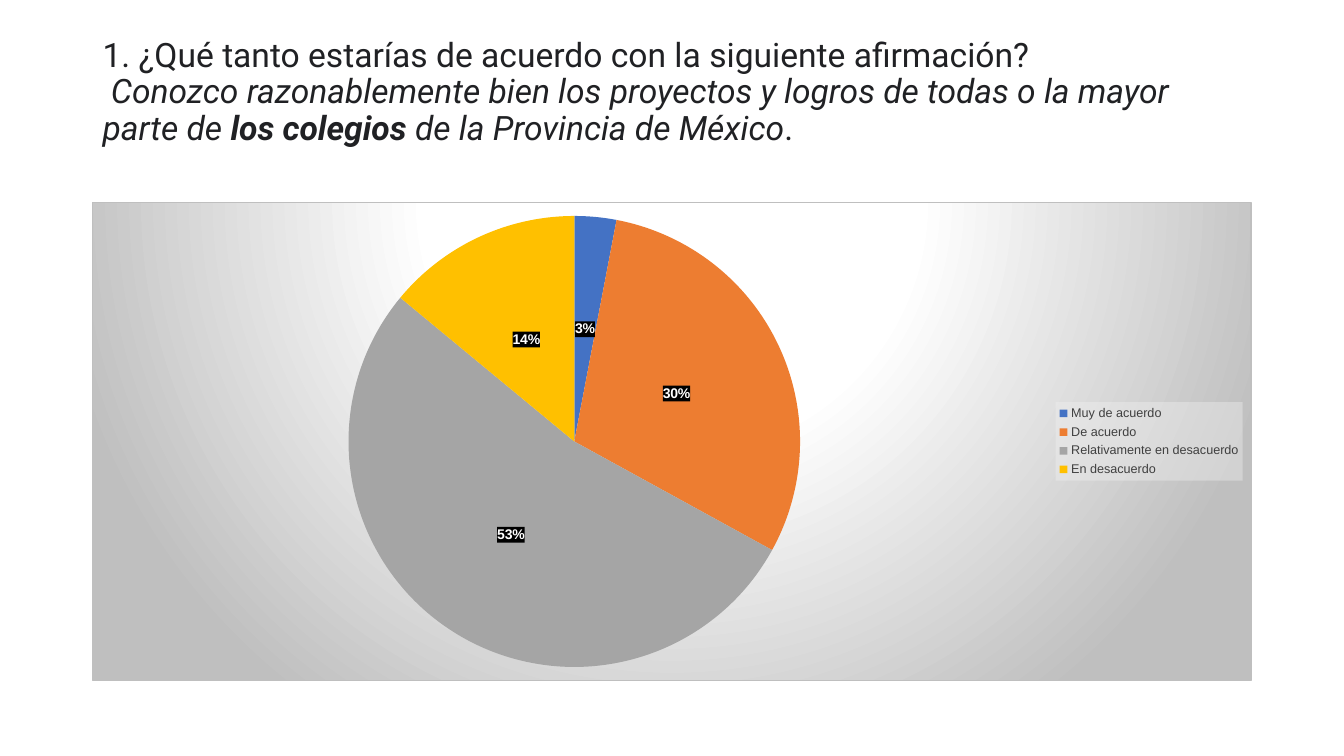
from copy import deepcopy

from pptx import Presentation
from pptx.chart.data import CategoryChartData
from pptx.dml.color import RGBColor
from pptx.enum.chart import XL_CHART_TYPE as CHART, XL_LABEL_POSITION as LABEL_POS
from pptx.enum.chart import XL_LEGEND_POSITION as LEGEND_POS
from pptx.enum.text import MSO_ANCHOR, MSO_AUTO_SIZE
from pptx.oxml import parse_xml
from pptx.oxml.ns import nsdecls, qn
from pptx.util import Cm, Pt

BLACK = RGBColor(0x00, 0x00, 0x00)
WHITE = RGBColor(0xFF, 0xFF, 0xFF)
INK = RGBColor(0x20, 0x21, 0x24)
LEGEND_INK = RGBColor(0x40, 0x40, 0x40)
LEGEND_BACK = RGBColor(0xF2, 0xF2, 0xF2)
SILVER = RGBColor(0xBF, 0xBF, 0xBF)
BLUE = RGBColor(0x44, 0x72, 0xC4)
ORANGE = RGBColor(0xED, 0x7D, 0x31)
GRAY = RGBColor(0xA5, 0xA5, 0xA5)
GOLD = RGBColor(0xFF, 0xC0, 0x00)

# Each row is a run: text, format, line break after it
QUESTION = [
    ("1. ¿Qué tanto estarías de acuerdo con la siguiente afirmación?", {}, True),
    (" ", {}, False),
    ("Conozco razonablemente bien los proyectos y logros de todas o la mayor parte de ",
     {"italic": True}, False),
    ("los colegios ", {"italic": True, "bold": True}, False),
    ("de la Provincia de México", {"italic": True}, False),
    (". ", {}, True),
]
ANSWERS = [
    ("Muy de acuerdo", 3, BLUE),
    ("De acuerdo", 30, ORANGE),
    ("Relativamente en desacuerdo", 53, GRAY),
    ("En desacuerdo", 14, GOLD),
]
BACKDROP = [(0, WHITE), (39, WHITE), (100, SILVER)]
LEFT, WIDTH = Cm(2.33), Cm(29.21)


def set_font(font, color, **values):
    font.color.rgb = color
    for name, value in values.items():
        setattr(font, name, value)


def shape_props(content):
    return parse_xml(f"<c:spPr {nsdecls('c', 'a')}>{content}</c:spPr>")


def solid_fill(color, opacity):
    return (f'<a:solidFill><a:srgbClr val="{color}"><a:alpha val="{opacity * 1000}"/>'
            "</a:srgbClr></a:solidFill>")


def add_question(slide):
    title = slide.shapes.title
    title.left, title.top, title.width, title.height = LEFT, Cm(1.01), WIDTH, Cm(3.68)
    tf = title.text_frame
    tf.auto_size = MSO_AUTO_SIZE.NONE
    tf.vertical_anchor = MSO_ANCHOR.MIDDLE
    p = tf.paragraphs[0]
    p.line_spacing = 0.9
    for text, style, breaks in QUESTION:
        r = p.add_run()
        r.text = text
        set_font(r.font, INK, size=Pt(24), name="Roboto", **style)
        if breaks:
            p.add_line_break()
    # Line breaks and the closing empty line keep the size of the text
    for br in p._p.findall(qn("a:br")):
        br.append(deepcopy(br.getprevious().find(qn("a:rPr"))))
    p._p.append(parse_xml(f'<a:endParaRPr {nsdecls("a")} sz="2400">'
                          '<a:latin typeface="Roboto"/></a:endParaRPr>'))


def add_answers(slide):
    data = CategoryChartData()
    data.categories = [name for name, _, _ in ANSWERS]
    data.add_series("Series 1", [value for _, value, _ in ANSWERS])
    chart = slide.shapes.add_chart(CHART.PIE, LEFT, Cm(5.08), WIDTH, Cm(12.09), data).chart
    chart.has_title = False
    set_font(chart.font, BLACK, size=Pt(10), name="Arial")

    plot = chart.plots[0]
    plot.vary_by_categories = True
    for i, (_, _, color) in enumerate(ANSWERS):
        fill = plot.series[0].points[i].format.fill
        fill.solid()
        fill.fore_color.rgb = color

    labels = plot.series[0].data_labels
    labels.show_percentage, labels.show_value = True, False
    labels.number_format, labels.number_format_is_linked = "0%", False
    labels.position = LABEL_POS.CENTER
    set_font(labels.font, WHITE, size=Pt(10), bold=True, name="Arial")

    chart.has_legend = True
    legend = chart.legend
    legend.position = LEGEND_POS.RIGHT
    legend.include_in_layout = False
    set_font(legend.font, LEGEND_INK, size=Pt(9), name="Arial")

    for part, color, opacity in ((labels, BLACK, 75), (legend, LEGEND_BACK, 39)):
        text_props = part._element.find(qn("c:txPr"))
        text_props.addprevious(shape_props(solid_fill(color, opacity)))

    stops = "".join(f'<a:gs pos="{pos * 1000}"><a:srgbClr val="{color}"/></a:gs>'
                    for pos, color in BACKDROP)
    chart._chartSpace.find(qn("c:chart")).addnext(shape_props(
        f'<a:gradFill><a:gsLst>{stops}</a:gsLst><a:path path="circle">'
        '<a:fillToRect l="50000" t="-80000" r="50000" b="180000"/></a:path></a:gradFill>'
        f'<a:ln w="{Pt(0.75)}"><a:solidFill><a:srgbClr val="{SILVER}"/></a:solidFill></a:ln>'))


def main():
    prs = Presentation()
    prs.slide_width, prs.slide_height = Cm(33.87), Cm(19.05)
    slide = prs.slides.add_slide(prs.slide_layouts[5])
    add_question(slide)
    # The default layout centres its title
    slide.shapes.title.text_frame.paragraphs[0].alignment = 1
    add_answers(slide)
    prs.save("out.pptx")


if __name__ == "__main__":
    main()
